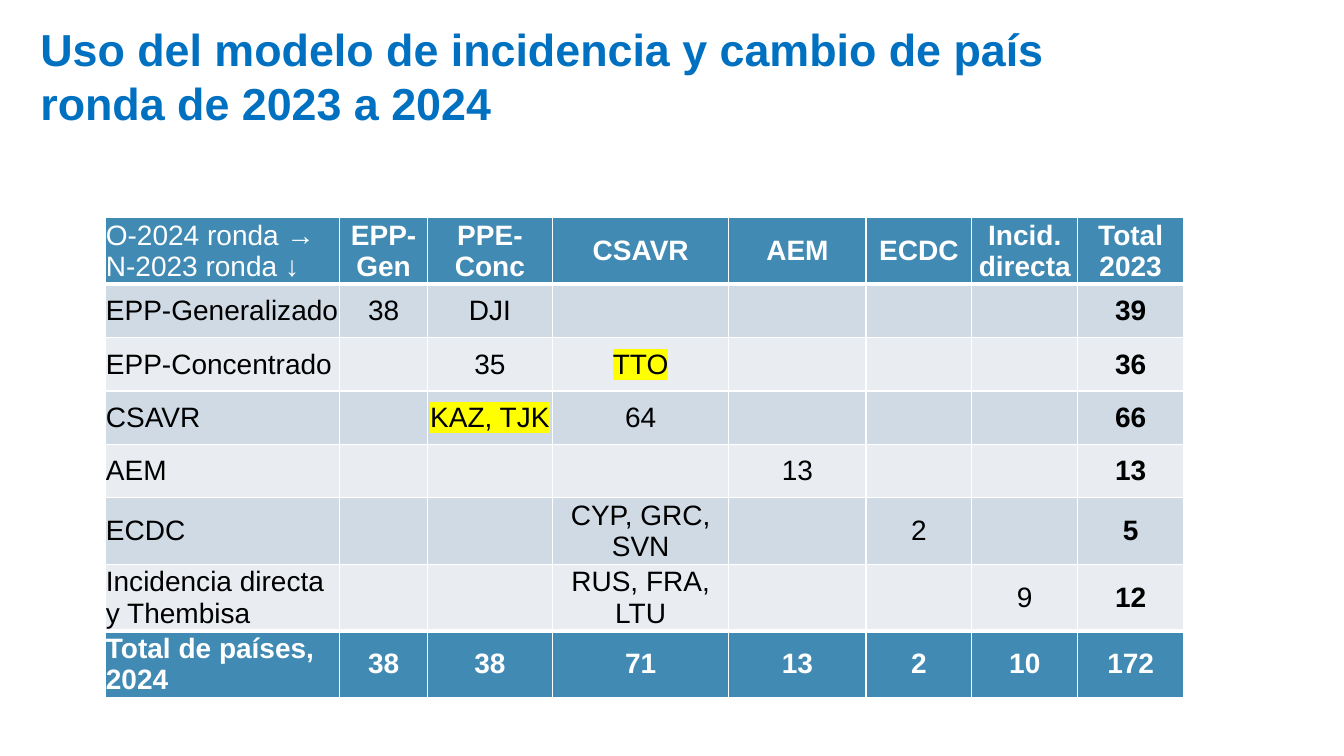
from dataclasses import dataclass

import pptx
import pptx.dml.color
import pptx.enum.text
import pptx.oxml
import pptx.oxml.ns
import pptx.util
from lxml import etree
from pptx.util import Inches


@dataclass(frozen=True)
class Theme:
    font: str = "Arial"
    title_size: int = 32
    table_size: int = 20
    title: str = "0070C0"
    accent: str = "418AB3"
    bands: tuple = ("CFDAE5", "E9EDF2")
    dark: str = "000000"
    light: str = "FFFFFF"
    highlight: str = "FFFF00"
    thin: int = 1
    thick: int = 3


THEME = Theme()
ALIGN = pptx.enum.text.PP_ALIGN
ANCHOR = pptx.enum.text.MSO_ANCHOR

TITLE = "Uso del modelo de incidencia y cambio de país\vronda de 2023 a 2024"
ROWS = [
    ["O-2024 ronda →\nN-2023 ronda ↓", "EPP-Gen", "PPE-Conc", "CSAVR", "AEM", "ECDC",
     "Incid. directa", "Total 2023"],
    ["EPP-Generalizado", "38", "DJI", "", "", "", "", "39"],
    ["EPP-Concentrado", "", "35", "TTO", "", "", "", "36"],
    ["CSAVR", "", "KAZ, TJK", "64", "", "", "", "66"],
    ["AEM", "", "", "", "13", "", "", "13"],
    ["ECDC", "", "", "CYP, GRC, SVN", "", "2", "", "5"],
    ["Incidencia directa y Thembisa", "", "", "RUS, FRA, LTU", "", "", "9", "12"],
    ["Total de países, 2024", "38", "38", "71", "13", "2", "10", "172"],
]
HIGHLIGHTED = {"TTO", "KAZ, TJK"}
COL_WIDTHS = [2.32, 0.87, 1.24, 1.75, 1.36, 1.05, 1.05, 1.05]
ROW_HEIGHTS = [0.66, 0.53, 0.53, 0.53, 0.53, 0.66, 0.66, 0.66]


def set_font(font, size, color, bold):
    font.name = THEME.font
    font.size = pptx.util.Pt(size)
    font.bold = bold
    font.color.rgb = pptx.dml.color.RGBColor.from_string(color)


def add_color(parent, tag, color):
    holder = etree.SubElement(parent, pptx.oxml.ns.qn(tag))
    etree.SubElement(holder, pptx.oxml.ns.qn("a:srgbClr"), val=color)


def set_borders(cell, top, bottom):
    """Draw white cell edges; the fill must be set afterwards to keep the XML order."""
    tc_pr = cell._tc.get_or_add_tcPr()
    for side, width in (("L", THEME.thin), ("R", THEME.thin), ("T", top), ("B", bottom)):
        ln = etree.SubElement(tc_pr, pptx.oxml.ns.qn("a:ln" + side),
                              w=str(pptx.util.Pt(width)))
        add_color(ln, "a:solidFill", THEME.light)


def fill_cell(cell, text, fill, color, bold, align):
    cell.margin_left = cell.margin_right = cell.margin_top = cell.margin_bottom = 0
    cell.vertical_anchor = ANCHOR.MIDDLE
    cell.fill.solid()
    cell.fill.fore_color.rgb = pptx.dml.color.RGBColor.from_string(fill)
    cell.text = text
    for p in cell.text_frame.paragraphs:
        p.alignment = align
        set_font(p.font, THEME.table_size, color, bold)
        if text in HIGHLIGHTED:
            add_color(p.runs[0]._r.get_or_add_rPr(), "a:highlight", THEME.highlight)


def add_title(s, left, top, width, height):
    sp = s.shapes.title
    sp.left, sp.top, sp.width, sp.height = map(Inches, (left, top, width, height))
    tf = sp.text_frame
    tf.word_wrap = True
    tf.auto_size = pptx.enum.text.MSO_AUTO_SIZE.NONE
    tf.vertical_anchor = ANCHOR.TOP
    tf.text = TITLE
    p = tf.paragraphs[0]
    p.alignment = ALIGN.LEFT
    set_font(p.font, THEME.title_size, THEME.title, True)


def add_model_table(s, left, top):
    width, height = sum(COL_WIDTHS), sum(ROW_HEIGHTS)
    table = s.shapes.add_table(len(ROWS), len(COL_WIDTHS), Inches(left), Inches(top),
                               Inches(width), Inches(height)).table
    for column, w in zip(table.columns, COL_WIDTHS):
        column.width = Inches(w)
    for row, h in zip(table.rows, ROW_HEIGHTS):
        row.height = Inches(h)

    last_row, last_col = len(ROWS) - 1, len(COL_WIDTHS) - 1
    for i, texts in enumerate(ROWS):
        is_band = 0 < i < last_row
        fill = THEME.bands[(i - 1) % 2] if is_band else THEME.accent
        color = THEME.dark if is_band else THEME.light
        top_edge = THEME.thick if i in (1, last_row) else THEME.thin
        bottom_edge = THEME.thick if i in (0, last_row - 1) else THEME.thin
        for j, text in enumerate(texts):
            cell = table.cell(i, j)
            bold = i == last_row or j == last_col or (i == 0 and j > 0)
            set_borders(cell, top_edge, bottom_edge)
            fill_cell(cell, text, fill, color, bold, ALIGN.CENTER if j else ALIGN.LEFT)


def main():
    prs = pptx.Presentation()
    prs.slide_width, prs.slide_height = Inches(13.33), Inches(7.5)
    s = prs.slides.add_slide(prs.slide_layouts[5])
    add_title(s, 0.3, 0.17, 12.67, 1.18)
    add_model_table(s, 1.05, 2.16)
    prs.save("out.pptx")


if __name__ == "__main__":
    main()
